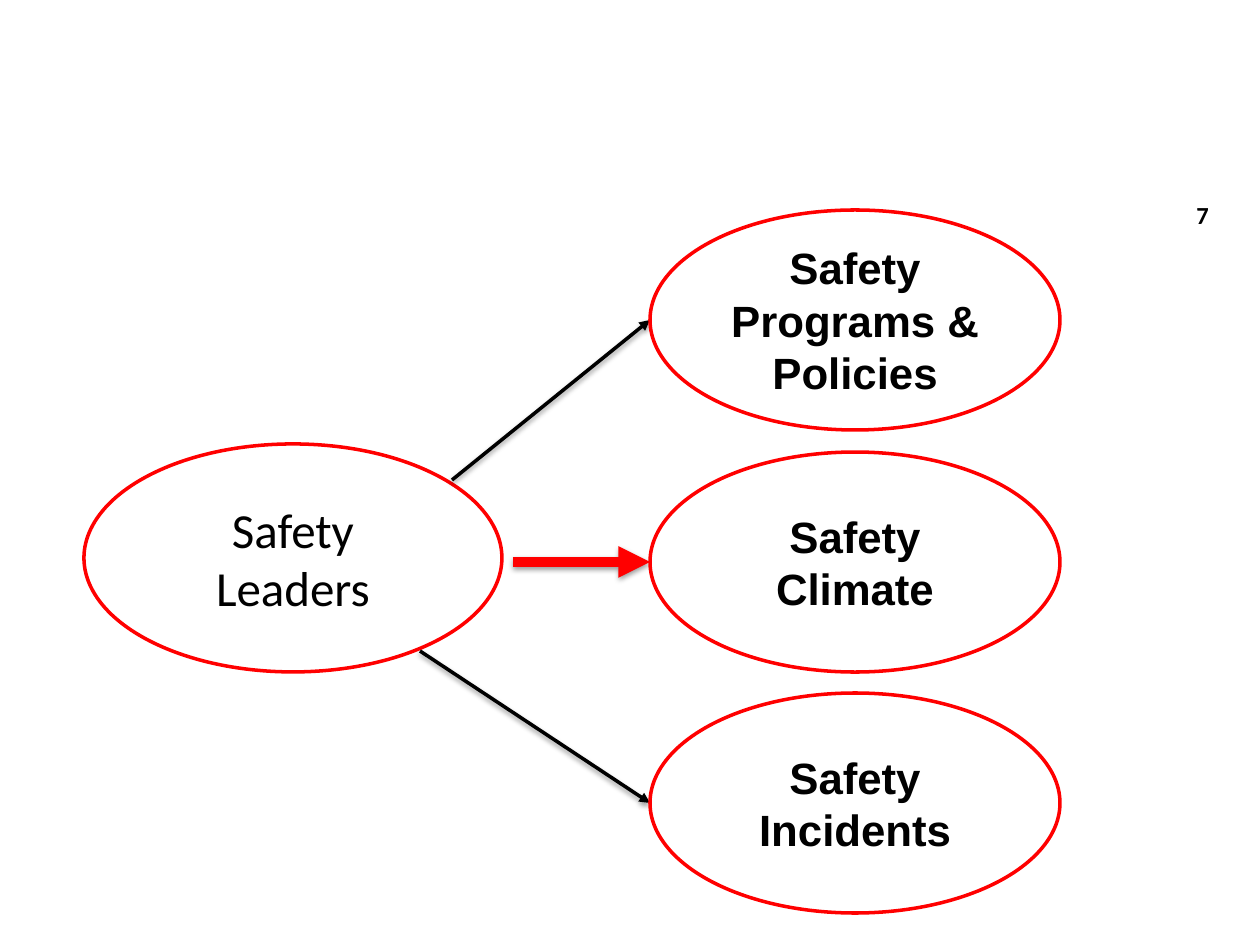
from lxml import etree
from pptx import Presentation
from pptx.dml.color import RGBColor as Rgb
from pptx.enum.shapes import MSO_CONNECTOR as Conn, MSO_SHAPE as Geo
from pptx.enum.text import MSO_ANCHOR as Anchor, PP_ALIGN as Align
from pptx.oxml import parse_xml
from pptx.oxml.ns import nsdecls, qn
from pptx.util import Inches, Pt

SCALE = Inches(1) / 126
COLORS = {"ink": "000000", "red": "FF0000", "paper": "FFFFFF"}


def emu(*px):
    return [round(n * SCALE) for n in px]


def tint(name):
    return Rgb.from_string(COLORS[name])


def write(frame, text, font="Arial", size=25, bold=True, align=Align.CENTER):
    """Put each line of text in its own paragraph."""
    frame.word_wrap = True
    for i, line in enumerate(text.split("\n")):
        para = frame.add_paragraph() if i else frame.paragraphs[0]
        para.alignment = align
        run = para.add_run()
        run.text = line
        run.font.name = font
        run.font.size = Pt(size)
        run.font.bold = bold
        run.font.color.rgb = tint("ink")


class Board:
    def __init__(self, slide):
        self.shapes = slide.shapes

    def label(self, box, text, **style):
        write(self.shapes.add_textbox(*emu(*box)).text_frame, text, **style)

    def oval(self, box, text, **style):
        shape = self.shapes.add_shape(Geo.OVAL, *emu(*box))
        shape.shadow.inherit = False
        shape.fill.solid()
        shape.fill.fore_color.rgb = tint("paper")
        shape.line.color.rgb = tint("red")
        shape.line.width = Pt(2)
        shape.text_frame.vertical_anchor = Anchor.MIDDLE
        write(shape.text_frame, text, **style)

    def arrow(self, start, end, color="ink", width=2):
        link = self.shapes.add_connector(Conn.STRAIGHT, *emu(*start, *end))
        link.line.color.rgb = tint(color)
        link.line.width = Pt(width)
        ln = link.line._get_or_add_ln()
        etree.SubElement(ln, qn("a:tailEnd"), type="triangle")
        # Soft shadow straight below the line
        ln.addnext(parse_xml(
            f'<a:effectLst {nsdecls("a")}>'
            f'<a:outerShdw blurRad="{Pt(3.1)}" dist="{Pt(1.6)}" dir="5400000" rotWithShape="0">'
            f'<a:srgbClr val="{COLORS["ink"]}"><a:alpha val="38000"/></a:srgbClr>'
            '</a:outerShdw></a:effectLst>'))


def main():
    deck = Presentation()
    deck.slide_width, deck.slide_height = emu(1260, 945)
    board = Board(deck.slides.add_slide(deck.slide_layouts[6]))

    # Page number
    board.label((1184, 194, 63, 43), "7", font="Calibri", size=14, align=Align.LEFT)

    # Cause
    board.oval((84, 444, 418, 228), "Safety Leaders", font="Calibri", size=28, bold=False)

    # Effects, each with the arrow that leads to it
    left, wide, high = 650, 410, 220
    effects = [
        (210, "Safety Programs &\nPolicies", (452, 480), {}),
        (452, "Safety Climate", (513, 562), {"color": "red", "width": 6}),
        (693, "Safety Incidents", (420, 651), {}),
    ]
    for top, text, start, style in effects:
        board.arrow(start, (left, top + high // 2), **style)
        board.oval((left, top, wide, high), text)

    deck.save("out.pptx")


if __name__ == "__main__":
    main()
